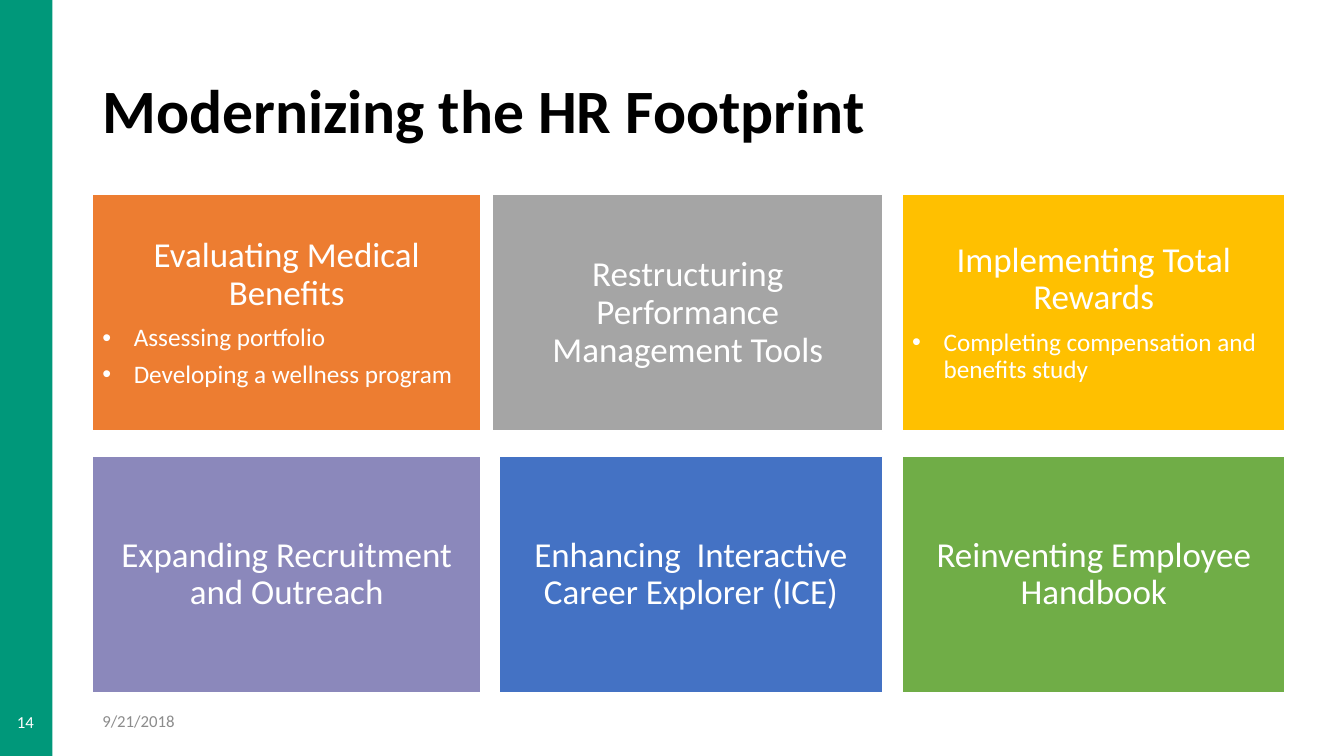
"""Build the slide on modernizing the HR footprint."""
from dataclasses import dataclass
from typing import Any

from lxml import etree
from pptx import Presentation
from pptx.dml.color import RGBColor
from pptx.enum import shapes, text
from pptx.oxml import ns
from pptx.util import Pt

ROW_TOPS = (139, 326)
CARD_HEIGHT = 169
CARD_INSET = 7.2
BULLET_INDENT = 22.5


@dataclass(frozen=True)
class Card:
    left: float
    width: float
    row: int
    fill: str
    heading: str
    bullets: tuple[str, ...] = ()


@dataclass(frozen=True)
class Label:
    box: tuple[float, float, float, float]
    wording: str
    size: float
    color: str
    bold: bool = False
    line_spacing: float = 1.0


CARDS = (
    Card(66, 277.5, 0, "ED7D31", "Evaluating Medical Benefits",
         ("Assessing portfolio", "Developing a wellness program")),
    Card(352, 278.5, 0, "A5A5A5", "Restructuring Performance Management Tools"),
    Card(644.5, 273.5, 0, "FFC000", "Implementing Total Rewards",
         ("Completing compensation and benefits study",)),
    Card(66, 277.5, 1, "8B88BB", "Expanding Recruitment and Outreach"),
    Card(356.5, 274, 1, "4472C4", "Enhancing  Interactive Career Explorer (ICE)"),
    Card(644.5, 273.5, 1, "70AD47", "Reinventing Employee Handbook"),
)

LABELS = (
    Label((66, 29, 828, 104.4), "Modernizing the HR Footprint", 44, "000000", True, 0.9),
    Label((5, 501, 216, 29), "14", 12, "FFFFFF"),
    Label((66, 500.5, 216, 29), "9/21/2018", 12, "8C8C8C"),
)


def rgb(value: str) -> RGBColor:
    """Turn a hex string into a colour."""
    return RGBColor.from_string(value)


def apply_format(target: Any, values: dict[str, Any]) -> None:
    """Set each named attribute of the target."""
    for name, value in values.items():
        setattr(target, name, value)


def style_font(paragraph: Any, size: float, color: str, bold: bool = False) -> None:
    """Format every run of a paragraph."""
    for run in paragraph.runs:
        apply_format(run.font, {"name": "Calibri", "size": Pt(size), "bold": bold})
        run.font.color.rgb = rgb(color)


def add_bullet(paragraph: Any) -> None:
    """Give a paragraph a hanging bullet."""
    properties = paragraph._p.get_or_add_pPr()
    properties.set("marL", str(Pt(BULLET_INDENT)))
    properties.set("indent", str(-Pt(BULLET_INDENT)))
    font = etree.SubElement(properties, ns.qn("a:buFont"))
    font.set("typeface", "Arial")
    etree.SubElement(properties, ns.qn("a:buChar")).set("char", "•")


def add_rectangle(slide: Any, box: tuple[float, ...], fill: str) -> Any:
    """Draw a filled rectangle without a shadow or an outline."""
    shape = slide.shapes.add_shape(shapes.MSO_SHAPE.RECTANGLE, *map(Pt, box))
    shape.shadow.inherit = False
    shape.fill.solid()
    shape.fill.fore_color.rgb = rgb(fill)
    shape.line.fill.background()
    return shape


def add_card(slide: Any, card: Card) -> None:
    """Draw a card with its heading and bullets."""
    box = (card.left, ROW_TOPS[card.row], card.width, CARD_HEIGHT)
    shape = add_rectangle(slide, box, card.fill)
    shape.line.color.rgb = rgb("FFFFFF")
    shape.line.width = Pt(1)
    frame = shape.text_frame
    margins = ("margin_left", "margin_top", "margin_right", "margin_bottom")
    apply_format(frame, {
        "word_wrap": True,
        "vertical_anchor": text.MSO_ANCHOR.MIDDLE,
        **dict.fromkeys(margins, Pt(CARD_INSET)),
    })
    for index, wording in enumerate((card.heading, *card.bullets)):
        paragraph = frame.add_paragraph() if index else frame.paragraphs[0]
        size = 18 if index else 25
        apply_format(paragraph, {
            "text": wording,
            "alignment": text.PP_ALIGN.LEFT if index else text.PP_ALIGN.CENTER,
            "line_spacing": 0.9,
            "space_after": Pt(size * 0.35),
        })
        if index:
            add_bullet(paragraph)
        style_font(paragraph, size, "FFFFFF")


def add_label(slide: Any, label: Label) -> None:
    """Place a single line of text."""
    frame = slide.shapes.add_textbox(*map(Pt, label.box)).text_frame
    apply_format(frame, {"word_wrap": True, "vertical_anchor": text.MSO_ANCHOR.MIDDLE})
    paragraph = frame.paragraphs[0]
    apply_format(paragraph, {"text": label.wording, "line_spacing": label.line_spacing})
    style_font(paragraph, label.size, label.color, label.bold)


def main() -> None:
    """Assemble and save the presentation."""
    presentation = Presentation()
    apply_format(presentation, {"slide_width": Pt(960), "slide_height": Pt(540)})
    slide = presentation.slides.add_slide(presentation.slide_layouts[6])
    add_rectangle(slide, (0, 0, 37.5, 540), "00987A")
    for card in CARDS:
        add_card(slide, card)
    for label in LABELS:
        add_label(slide, label)
    presentation.save("out.pptx")


if __name__ == "__main__":
    main()
